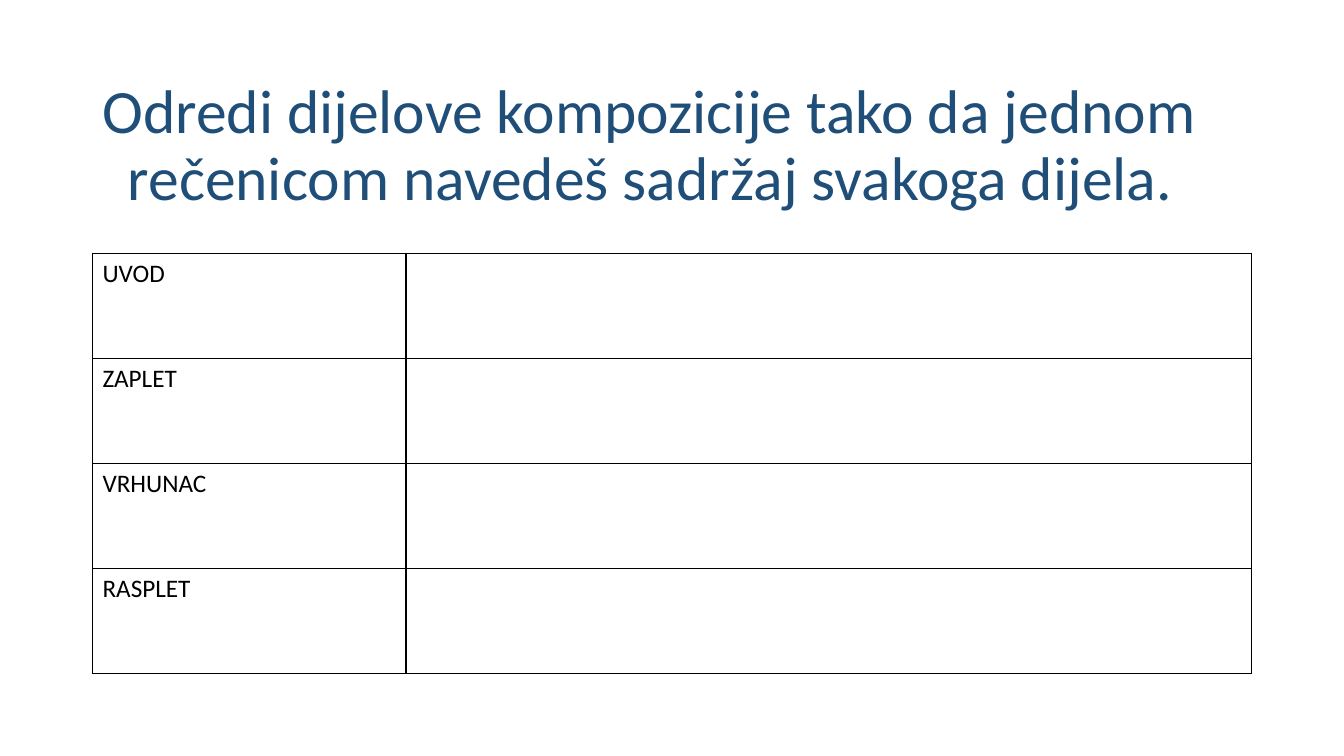
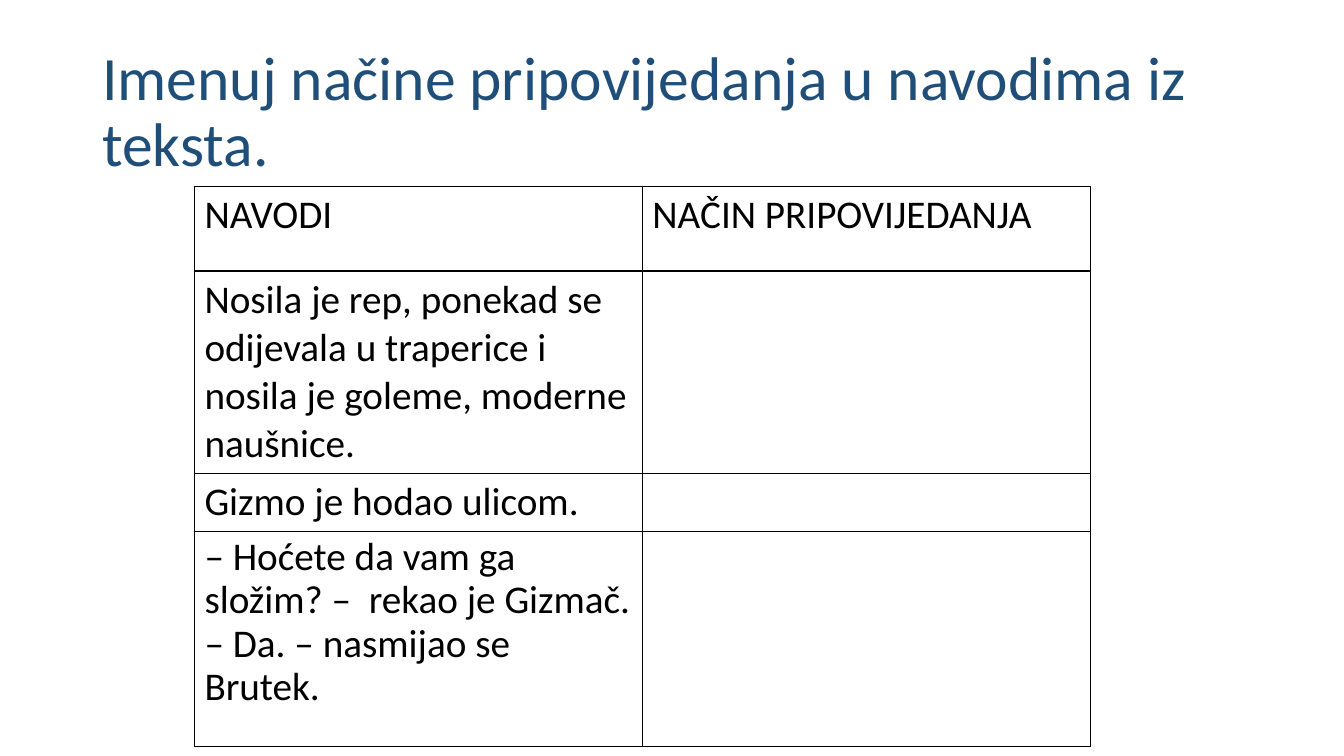
from dataclasses import dataclass
from typing import Any

from lxml.etree import SubElement
from pptx import Presentation
from pptx.dml.color import RGBColor
from pptx.enum.text import MSO_ANCHOR
from pptx.oxml.ns import qn
from pptx.slide import Slide
from pptx.table import _Cell
from pptx.text.text import _Paragraph
from pptx.util import Cm, Length, Pt


@dataclass(frozen=True)
class Theme:
    font: str = "Calibri"
    heading: str = "1F4E79"
    ink: str = "000000"
    heading_size: Length = Pt(44)
    label_size: Length = Pt(18)
    quote_size: Length = Pt(28)
    border: Length = Pt(1)


THEME = Theme()
TIGHT = {"line_spacing": 0.9}
SPACED = {"line_spacing": 0.9, "space_before": Pt(10)}


@dataclass(frozen=True)
class Heading:
    text: str
    height: Length
    paragraph_format: dict[str, Any]
    hanging: Length = Cm(0)


@dataclass(frozen=True)
class Row:
    height: Length
    texts: tuple[str, ...]
    paragraph_format: dict[str, Any]


@dataclass(frozen=True)
class Grid:
    left: Length
    top: Length
    columns: tuple[Length, ...]
    rows: tuple[Row, ...]
    size: Length


@dataclass(frozen=True)
class Exercise:
    heading: Heading
    grid: Grid


EXERCISES = (
    Exercise(
        Heading(
            "Odredi dijelove kompozicije tako da jednom rečenicom navedeš sadržaj svakoga dijela.",
            Cm(5.38), SPACED, Cm(0.64),
        ),
        Grid(
            Cm(2.33), Cm(6.38), (Cm(7.9), Cm(21.31)),
            tuple(
                Row(Cm(2.65), (part,), {})
                for part in ("UVOD", "ZAPLET", "VRHUNAC", "RASPLET")
            ),
            THEME.label_size,
        ),
    ),
    Exercise(
        Heading("Imenuj načine pripovijedanja u navodima iz teksta.", Cm(3.68), TIGHT),
        Grid(
            Cm(4.9), Cm(4.7), (Cm(11.29), Cm(11.29)),
            (
                Row(Cm(2.13), ("NAVODI", "NAČIN PRIPOVIJEDANJA"), {}),
                Row(
                    Cm(5.1),
                    ("Nosila je rep, ponekad se odijevala u traperice i nosila je goleme, moderne naušnice.",),
                    {},
                ),
                Row(Cm(1.46), ("Gizmo je hodao ulicom.",), {}),
                Row(
                    Cm(5.42),
                    ("– Hoćete da vam ga složim? –  rekao je Gizmač. – Da. – nasmijao se Brutek.",),
                    SPACED,
                ),
            ),
            THEME.quote_size,
        ),
    ),
)


def apply_format(target: Any, values: dict[str, Any]) -> None:
    for name, value in values.items():
        setattr(target, name, value)


def write(
    paragraph: _Paragraph, text: str, size: Length, color: str, paragraph_format: dict[str, Any]
) -> None:
    run = paragraph.add_run()
    run.text = text
    apply_format(run.font, {"name": THEME.font, "size": size})
    run.font.color.rgb = RGBColor.from_string(color)
    apply_format(paragraph, paragraph_format)


def draw_heading(slide: Slide, heading: Heading) -> None:
    frame = slide.shapes.add_textbox(Cm(2.33), Cm(1.02), Cm(29.21), heading.height).text_frame
    apply_format(frame, {"word_wrap": True, "vertical_anchor": MSO_ANCHOR.MIDDLE})
    paragraph = frame.paragraphs[0]
    write(paragraph, heading.text, THEME.heading_size, THEME.heading, heading.paragraph_format)
    if heading.hanging:
        properties = paragraph._p.get_or_add_pPr()
        properties.set("marL", str(heading.hanging))
        properties.set("indent", str(-heading.hanging))


def outline(cell: _Cell) -> None:
    properties = cell._tc.get_or_add_tcPr()
    for side in ("a:lnL", "a:lnR", "a:lnT", "a:lnB"):
        edge = SubElement(properties, qn(side), w=str(THEME.border))
        SubElement(SubElement(edge, qn("a:solidFill")), qn("a:srgbClr"), val=THEME.ink)
    cell.fill.background()


def draw_grid(slide: Slide, grid: Grid) -> None:
    table = slide.shapes.add_table(
        len(grid.rows), len(grid.columns), grid.left, grid.top,
        Length(sum(grid.columns)), Length(sum(row.height for row in grid.rows)),
    ).table
    apply_format(table, {"first_row": False, "horz_banding": False})
    for column, width in zip(table.columns, grid.columns):
        column.width = width
    for table_row, row in zip(table.rows, grid.rows):
        table_row.height = row.height
        for cell in table_row.cells:
            outline(cell)
        for cell, text in zip(table_row.cells, row.texts):
            write(cell.text_frame.paragraphs[0], text, grid.size, THEME.ink, row.paragraph_format)


def main() -> None:
    deck = Presentation()
    apply_format(deck, {"slide_width": Cm(33.87), "slide_height": Cm(19.05)})
    for exercise in EXERCISES:
        slide = deck.slides.add_slide(deck.slide_layouts[6])
        draw_heading(slide, exercise.heading)
        draw_grid(slide, exercise.grid)
    deck.save("out.pptx")


if __name__ == "__main__":
    main()
